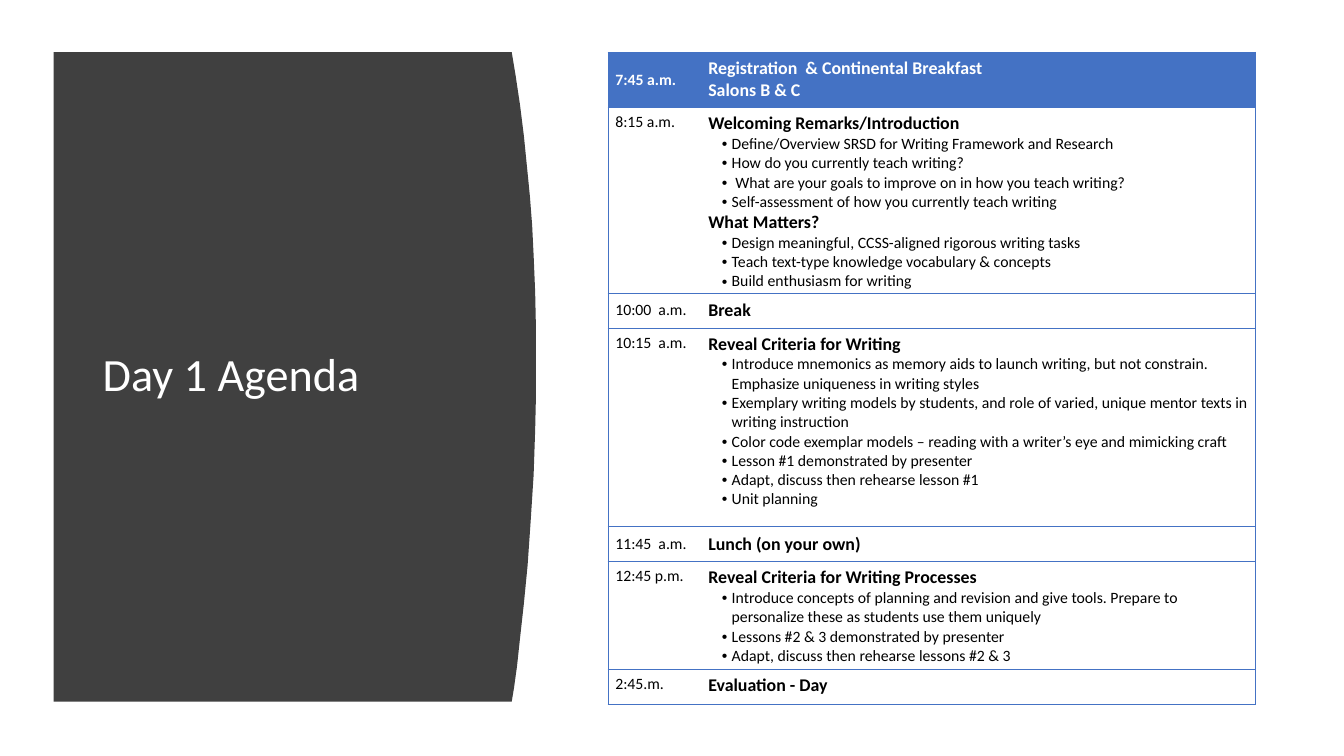
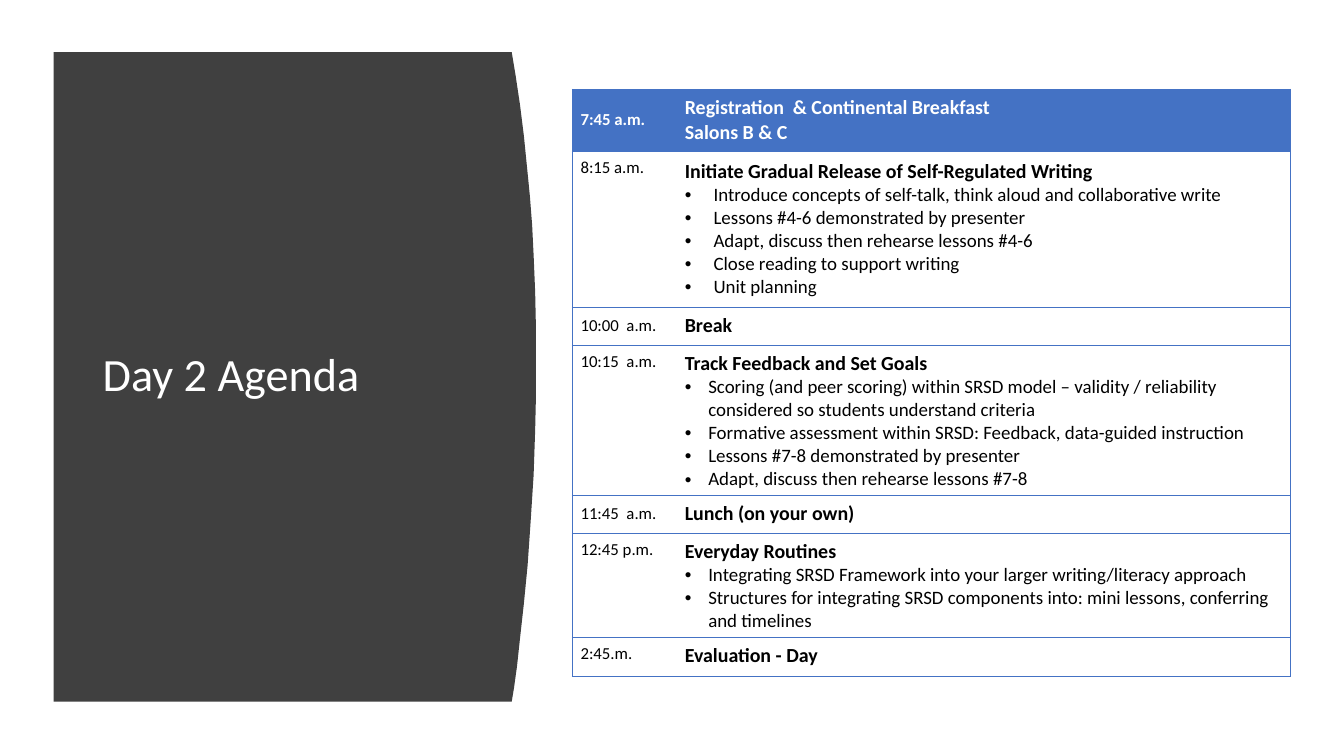
"""Build two agenda slides, each with a curved title panel and a timetable."""
import pptx
import pptx.chart.data
import pptx.dml.color
import pptx.enum.text
import pptx.oxml
import pptx.oxml.ns
import pptx.util
from dataclasses import dataclass
from lxml import etree

Inches = pptx.util.Inches
Pt = pptx.util.Pt
Rgb = pptx.dml.color.RGBColor.from_string
Anchor = pptx.enum.text.MSO_ANCHOR
qn = pptx.oxml.ns.qn


@dataclass
class Theme:
    font: str = "Calibri"
    panel: str = "404040"
    blue: str = "4472C4"
    white: str = "FFFFFF"
    black: str = "000000"
    title: int = 44
    rule: float = 0.5


theme = Theme()

bend = [
    (6.77, 0.69), (6.82, 0.99), (6.88, 1.39), (6.93, 1.79), (6.97, 2.19),
    (7.01, 2.59), (7.04, 2.98), (7.06, 3.38), (7.08, 3.86), (7.09, 4.33),
    (7.09, 5.25), (7.08, 5.69), (7.06, 6.28), (7.02, 6.9), (6.98, 7.48),
    (6.93, 7.99), (6.88, 8.44), (6.84, 8.81), (6.8, 9.1), (6.77, 9.28),
]

start = ("7:45 a.m.", ["Registration  & Continental Breakfast", "Salons B & C"])
rest = ("10:00  a.m.", ["Break"])
lunch = ("11:45  a.m.", ["Lunch (on your own)"])
close = ("2:45.m.", ["Evaluation - Day"])

days = [
    dict(
        title="Day 1 Agenda", left=8.04, top=0.69, cols=[1.23, 7.34],
        rows=[0.73, 2.43, 0.46, 2.63, 0.46, 1.42, 0.46],
        pad=(0.1, 0.07), time=15, head=17, item=15,
        indent={1: (0.31, 0.13), 3: (0.31, 0.13), 5: (0.31, 0.13)},
        plan=[
            start,
            ("8:15 a.m.", [
                "Welcoming Remarks/Introduction",
                "•Define/Overview SRSD for Writing Framework and Research",
                "•How do you currently teach writing?",
                "• What are your goals to improve on in how you teach writing?",
                "•Self-assessment of how you currently teach writing",
                "What Matters?",
                "•Design meaningful, CCSS-aligned rigorous writing tasks",
                "•Teach text-type knowledge vocabulary & concepts",
                "•Build enthusiasm for writing",
            ]),
            rest,
            ("10:15  a.m.", [
                "Reveal Criteria for Writing",
                "•Introduce mnemonics as memory aids to launch writing, but not "
                "constrain. Emphasize uniqueness in writing styles",
                "•Exemplary writing models by students, and role of varied, "
                "unique mentor texts in writing instruction",
                "•Color code exemplar models – reading with a writer’s eye and "
                "mimicking craft",
                "•Lesson #1 demonstrated by presenter",
                "•Adapt, discuss then rehearse lesson #1",
                "•Unit planning",
            ]),
            lunch,
            ("12:45 p.m.", [
                "Reveal Criteria for Writing Processes",
                "•Introduce concepts of planning and revision and give tools. "
                "Prepare to personalize these as students use them uniquely",
                "•Lessons #2 & 3 demonstrated by presenter",
                "•Adapt, discuss then rehearse lessons #2 & 3",
            ]),
            close,
        ],
    ),
    dict(
        title="Day 2 Agenda", left=7.57, top=1.18, cols=[1.38, 8.12],
        rows=[0.82, 2.06, 0.51, 1.86, 0.51, 1.32, 0.51],
        pad=(0.11, 0.08), time=16, head=19, item=18,
        indent={1: (0.38, 0.38), 3: (0.31, 0.31), 5: (0.31, 0.31)},
        plan=[
            start,
            ("8:15 a.m.", [
                "Initiate Gradual Release of Self-Regulated Writing",
                "•Introduce concepts of self-talk, think aloud and collaborative write",
                "•Lessons #4-6 demonstrated by presenter",
                "•Adapt, discuss then rehearse lessons #4-6",
                "•Close reading to support writing",
                "•Unit planning",
            ]),
            rest,
            ("10:15  a.m.", [
                "Track Feedback and Set Goals",
                "•Scoring (and peer scoring) within SRSD model – validity / "
                "reliability considered so students understand criteria",
                "•Formative assessment within SRSD: Feedback, data-guided instruction",
                "•Lessons #7-8 demonstrated by presenter",
                "•Adapt, discuss then rehearse lessons #7-8",
            ]),
            lunch,
            ("12:45 p.m.", [
                "Everyday Routines",
                "•Integrating SRSD Framework into your larger writing/literacy approach",
                "•Structures for integrating SRSD components into: mini lessons, "
                "conferring and timelines",
            ]),
            close,
        ],
    ),
]


def style(para, size, color, bold=False):
    for run in para.runs:
        run.font.name = theme.font
        run.font.size = Pt(size)
        run.font.bold = bold
        run.font.color.rgb = Rgb(color)


def border(cell, inner):
    props = cell._tc.get_or_add_tcPr()
    for side in ("lnL", "lnR", "lnT", "lnB"):
        line = etree.SubElement(props, qn("a:" + side), w=str(Pt(theme.rule)))
        if side == inner:
            etree.SubElement(line, qn("a:noFill"))
        else:
            fill = etree.SubElement(line, qn("a:solidFill"))
            etree.SubElement(fill, qn("a:srgbClr"), val=theme.blue)


deck = pptx.Presentation()
deck.slide_width = Inches(17.78)
deck.slide_height = Inches(10)

for day in days:
    slide = deck.slides.add_slide(deck.slide_layouts[6])

    pen = slide.shapes.build_freeform(Inches(0.71), Inches(0.69))
    edge = bend + [(0.71, 9.28)]
    pen.add_line_segments([(Inches(x), Inches(y)) for x, y in edge], close=True)
    panel = pen.convert_to_shape()
    panel.shadow.inherit = False
    panel.fill.solid()
    panel.fill.fore_color.rgb = Rgb(theme.panel)
    panel.line.fill.background()

    box = slide.shapes.add_textbox(Inches(1.26), Inches(1.48), Inches(4.98), Inches(6.99))
    frame = box.text_frame
    frame.word_wrap = True
    frame.vertical_anchor = Anchor.MIDDLE
    frame.text = day["title"]
    frame.paragraphs[0].line_spacing = 0.9
    style(frame.paragraphs[0], theme.title, theme.white)

    table = slide.shapes.add_table(
        len(day["rows"]), 2, Inches(day["left"]), Inches(day["top"]),
        Inches(sum(day["cols"])), Inches(sum(day["rows"]))).table
    table.first_row = False
    table.horz_banding = False
    for col, width in zip(table.columns, day["cols"]):
        col.width = Inches(width)

    for num, (time, lines) in enumerate(day["plan"]):
        table.rows[num].height = Inches(day["rows"][num])
        top = num == 0
        color = theme.white if top else theme.black
        slot, body = table.cell(num, 0), table.cell(num, 1)
        for cell, inner in ((slot, "lnR"), (body, "lnL")):
            border(cell, inner)
            cell.fill.solid()
            cell.fill.fore_color.rgb = Rgb(theme.blue if top else theme.white)
            cell.margin_left = cell.margin_right = Inches(day["pad"][0])
            cell.margin_top = cell.margin_bottom = Inches(day["pad"][1])
        slot.vertical_anchor = Anchor.MIDDLE if num in (0, 2, 4) else Anchor.TOP
        body.vertical_anchor = Anchor.TOP if num in (3, 6) else Anchor.MIDDLE

        slot.text_frame.text = time
        style(slot.text_frame.paragraphs[0], day["time"], color, top)

        body.text_frame.text = "\n".join(line.removeprefix("•") for line in lines)
        for para, line in zip(body.text_frame.paragraphs, lines):
            point = line.startswith("•")
            style(para, day["item" if point else "head"], color, not point)
            if point:
                left, hang = day["indent"][num]
                props = para._p.get_or_add_pPr()
                props.set("marL", str(Inches(left)))
                props.set("indent", str(-Inches(hang)))
                etree.SubElement(props, qn("a:buFont"), typeface="Arial")
                etree.SubElement(props, qn("a:buChar"), char="•")

deck.save("out.pptx")
